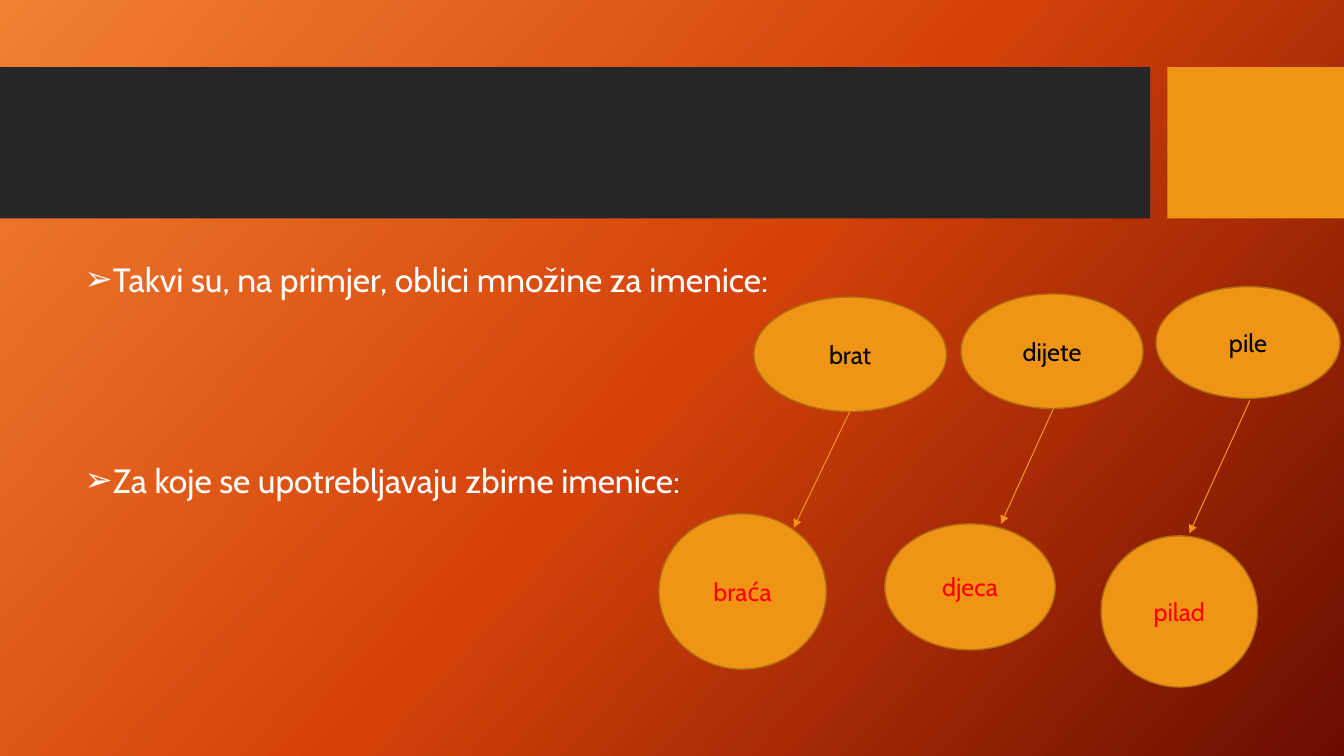
from typing import NamedTuple

from lxml import etree
from pptx import Presentation
from pptx.dml.color import RGBColor
from pptx.enum.shapes import MSO_CONNECTOR, MSO_SHAPE
from pptx.enum.text import MSO_ANCHOR, MSO_AUTO_SIZE, PP_ALIGN
from pptx.oxml import parse_xml
from pptx.oxml.ns import nsdecls, qn
from pptx.util import Pt

RECTANGLE, OVAL = MSO_SHAPE.RECTANGLE, MSO_SHAPE.OVAL
STRAIGHT = MSO_CONNECTOR.STRAIGHT
TOP, MIDDLE = MSO_ANCHOR.TOP, MSO_ANCHOR.MIDDLE
LEFT, CENTER = PP_ALIGN.LEFT, PP_ALIGN.CENTER
NO_AUTOFIT = MSO_AUTO_SIZE.NONE

FONT = "Cabin"
COLORS = {
    "band": "262626",
    "amber": "F09415",
    "outline": "B26D10",
    "white": "FFFFFF",
    "black": "000000",
    "red": "FF0000",
}
BACKGROUND_STOPS = {0: "F18031", 50: "D54209", 100: "6A0D00"}
BACKGROUND_ANGLE = 42


class Box(NamedTuple):
    left: float
    top: float
    width: float
    height: float


class Noun(NamedTuple):
    word: str
    box: Box
    color: str


class Arrow(NamedTuple):
    start_x: float
    start_y: float
    end_x: float
    end_y: float


class ListItem(NamedTuple):
    text: str
    space_before: float


BANDS = [
    (Box(0, 48, 821.5, 108), "band"),
    (Box(833.8, 48, 126.2, 108), "amber"),
]
BODY_BOX = Box(53.3, 184.3, 756.7, 283.7)
ITEMS = [
    ListItem("Takvi su, na primjer, oblici množine za imenice:", 0),
    ListItem("Za koje se upotrebljavaju zbirne imenice:", 117.6),
]
NOUNS = [
    Noun("brat", Box(538.5, 212.2, 137.5, 81.8), "black"),
    Noun("dijete", Box(686.5, 210, 130, 81.8), "black"),
    Noun("pile", Box(825.8, 204.8, 131.4, 79.7), "black"),
    Noun("braća", Box(470.7, 367, 119.5, 111), "red"),
    Noun("djeca", Box(632, 374.2, 121.7, 90), "red"),
    Noun("pilad", Box(786.5, 382.8, 111.7, 108), "red"),
]
ARROWS = [
    Arrow(607, 294, 567, 377),
    Arrow(752.4, 292, 715, 374.2),
    Arrow(892.8, 286, 849.6, 381),
]


def rgb(name: str) -> RGBColor:
    return RGBColor.from_string(COLORS[name])


def paint_background(page) -> None:
    stops = "".join(
        f'<a:gs pos="{percent * 1000}"><a:srgbClr val="{color}"/></a:gs>'
        for percent, color in BACKGROUND_STOPS.items()
    )
    background = parse_xml(
        f'<p:bg {nsdecls("p", "a")}><p:bgPr><a:gradFill rotWithShape="1">'
        f'<a:gsLst>{stops}</a:gsLst><a:lin ang="{BACKGROUND_ANGLE * 60000}" scaled="0"/>'
        "</a:gradFill><a:effectLst/></p:bgPr></p:bg>"
    )
    page.element.cSld.insert(0, background)


def write(para, text: str, *, size: float, color: str, align=LEFT) -> None:
    para.alignment = align
    span = para.add_run()
    span.text = text
    span.font.name = FONT
    span.font.size = Pt(size)
    span.font.color.rgb = rgb(color)


def add_filled(page, kind, box: Box, fill: str):
    shape = page.shapes.add_shape(kind, *map(Pt, box))
    shape.shadow.inherit = False
    shape.fill.solid()
    shape.fill.fore_color.rgb = rgb(fill)
    shape.line.fill.background()
    return shape


def add_noun(page, noun: Noun) -> None:
    oval = add_filled(page, OVAL, noun.box, "amber")
    oval.line.color.rgb = rgb("outline")
    oval.line.width = Pt(1)
    frame = oval.text_frame
    frame.vertical_anchor = MIDDLE
    write(frame.paragraphs[0], noun.word, size=18, color=noun.color, align=CENTER)


def add_arrow(page, arrow: Arrow) -> None:
    connector = page.shapes.add_connector(STRAIGHT, *map(Pt, arrow))
    connector.line.color.rgb = rgb("amber")
    connector.line.width = Pt(0.75)
    line = connector.line._get_or_add_ln()
    etree.SubElement(line, qn("a:tailEnd"), type="triangle")
    etree.SubElement(connector.element.spPr, qn("a:effectLst"))


def fill_list(body, items: list[ListItem]) -> None:
    body.left, body.top, body.width, body.height = map(Pt, BODY_BOX)
    frame = body.text_frame
    frame.word_wrap = True
    frame.auto_size = NO_AUTOFIT
    frame.vertical_anchor = TOP
    for index, item in enumerate(items):
        para = frame.add_paragraph() if index else frame.paragraphs[0]
        properties = para._p.get_or_add_pPr()
        properties.set("marL", str(Pt(18)))
        properties.set("indent", str(-Pt(18)))
        etree.SubElement(properties, qn("a:buChar"), char="➢")
        para.line_spacing = 0.9
        para.space_before = Pt(item.space_before)
        write(para, item.text, size=24, color="white")


def main() -> None:
    deck = Presentation()
    deck.slide_width, deck.slide_height = Pt(960), Pt(540)
    page = deck.slides.add_slide(deck.slide_layouts[1])
    paint_background(page)

    # The title band stays empty
    title = page.shapes.title.element
    title.getparent().remove(title)
    for box, fill in BANDS:
        add_filled(page, RECTANGLE, box, fill)

    # Statements on the left
    fill_list(page.placeholders[1], ITEMS)

    # Singular nouns pointing to their collective nouns
    for noun in NOUNS:
        add_noun(page, noun)
    for arrow in ARROWS:
        add_arrow(page, arrow)

    deck.save("out.pptx")


if __name__ == "__main__":
    main()
